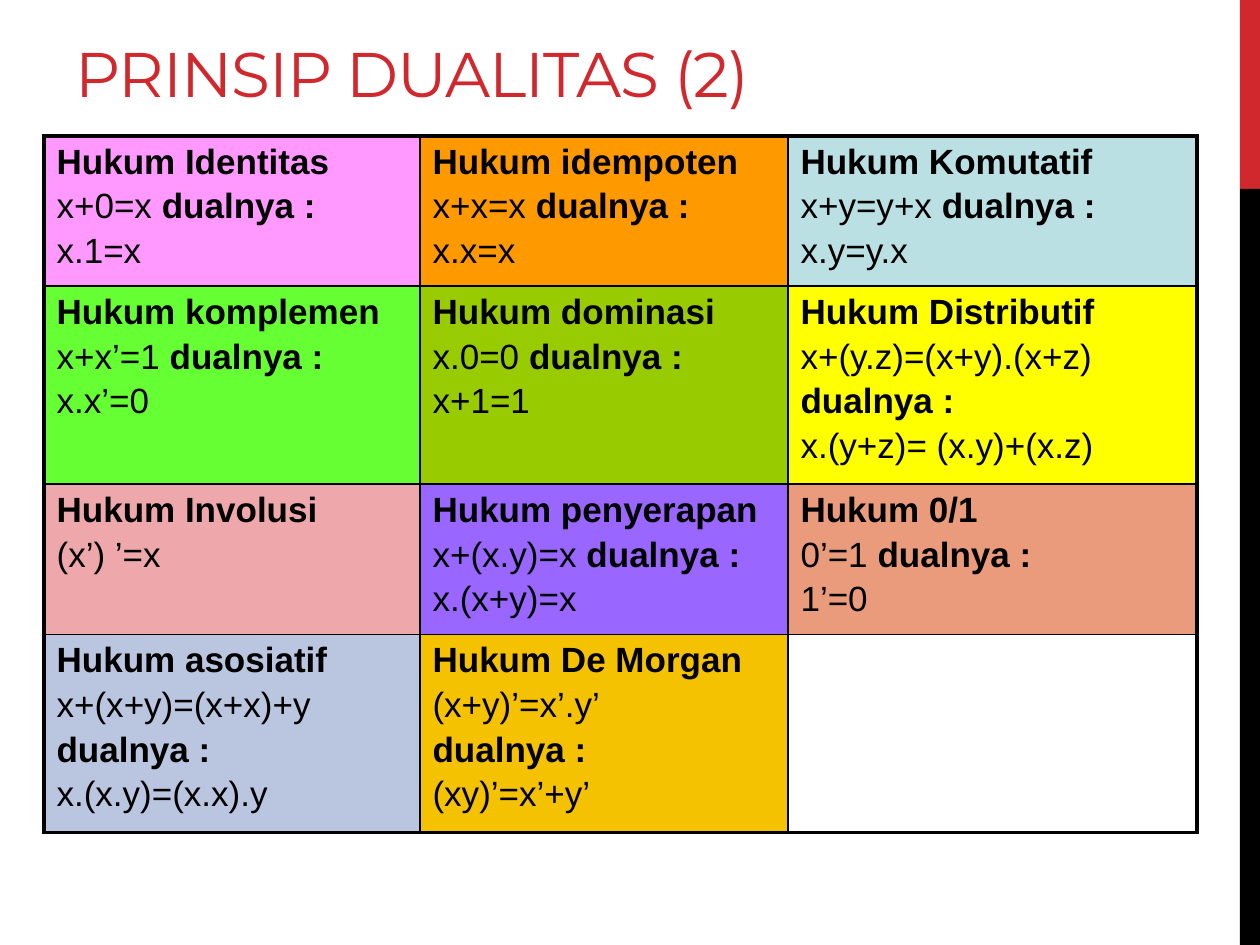
from pptx import Presentation
from pptx.dml.color import RGBColor as RGB
from pptx.enum.shapes import MSO_SHAPE as Shape
from pptx.enum.text import MSO_ANCHOR as Anchor
from pptx.oxml import parse_xml
from pptx.oxml.ns import nsdecls
from pptx.util import Emu, Pt

PX = 914400 // 126


class Theme:
    red, black = "D1282E", "000000"
    head, body = "Montserrat", "Arial"
    title, text = Pt(36), Pt(20)
    gap = Pt(3.3)
    thin, thick = Pt(1), Pt(2.25)


def px(*nums):
    return [Emu(n * PX) for n in nums]


def edge(cell, side, width):
    cell._tc.get_or_add_tcPr().append(parse_xml(
        f'<a:{side} {nsdecls("a")} w="{width}"><a:solidFill>'
        f'<a:srgbClr val="{Theme.black}"/></a:solidFill></a:{side}>'))


deck = Presentation()
deck.slide_width, deck.slide_height = px(1260, 945)
slide = deck.slides.add_slide(deck.slide_layouts[6])

# Side bars
for top, high, color in ((0, 189, Theme.red), (189, 756, Theme.black)):
    bar = slide.shapes.add_shape(Shape.RECTANGLE, *px(1240, top, 20, high))
    bar.shadow.inherit = False
    bar.fill.solid()
    bar.fill.fore_color.rgb = RGB.from_string(color)
    bar.line.fill.background()

# Title
frame = slide.shapes.add_textbox(*px(63, 21, 798, 95)).text_frame
frame.word_wrap = True
frame.vertical_anchor = Anchor.BOTTOM
para = frame.paragraphs[0]
run = para.add_run()
run.text = "PRINSIP DUALITAS (2)"
run._r.get_or_add_rPr().set("spc", "-60")
para.font.name, para.font.size = Theme.head, Theme.title
para.font.color.rgb = RGB.from_string(Theme.red)

# Laws: fill colour, then the lines of each cell
DUAL = "dualnya :"
laws = [
    [("FF99FF", "Hukum Identitas", "x+0=x dualnya :", "x.1=x"),
     ("FF9900", "Hukum idempoten", "x+x=x dualnya :", "x.x=x"),
     ("BBE0E3", "Hukum Komutatif", "x+y=y+x dualnya :", "x.y=y.x")],
    [("66FF33", "Hukum komplemen", "x+x’=1 dualnya :", "x.x’=0"),
     ("99CC00", "Hukum dominasi", "x.0=0 dualnya :", "x+1=1"),
     ("FFFF00", "Hukum Distributif", "x+(y.z)=(x+y).(x+z)", DUAL,
      "x.(y+z)= (x.y)+(x.z)")],
    [("EEA7AA", "Hukum Involusi", "(x’) ’=x"),
     ("9966FF", "Hukum penyerapan", "x+(x.y)=x dualnya :", "x.(x+y)=x"),
     ("EA9B7C", "Hukum 0/1", "0’=1 dualnya :", "1’=0")],
    [("BAC5DF", "Hukum asosiatif", "x+(x+y)=(x+x)+y", DUAL, "x.(x.y)=(x.x).y"),
     ("F5C201", "Hukum De Morgan", "(x+y)’=x’.y’", DUAL, "(xy)’=x’+y’"),
     (None,)],
]
wide, high = px(376, 368, 409), px(145, 146, 145, 183)

# Table
table = slide.shapes.add_table(
    len(high), len(wide), *px(44, 136), sum(wide), sum(high)).table
table.first_row = table.horz_banding = False
for col, size in zip(table.columns, wide):
    col.width = size
for row, size in zip(table.rows, high):
    row.height = size

for r, row in enumerate(laws):
    for c, (color, *lines) in enumerate(row):
        cell = table.cell(r, c)
        outer = {"lnL": c == 0, "lnR": c == len(wide) - 1,
                 "lnT": r == 0, "lnB": r == len(high) - 1}
        for side, out in outer.items():
            edge(cell, side, Theme.thick if out else Theme.thin)
        if color:
            cell.fill.solid()
            cell.fill.fore_color.rgb = RGB.from_string(color)
        else:
            cell.fill.background()

        # Headings and the word for the dual are bold
        for i, line in enumerate(lines):
            frame = cell.text_frame
            para = frame.add_paragraph() if i else frame.paragraphs[0]
            if i:
                para.space_before = Theme.gap
            rule, dual, _ = line.partition(DUAL)
            for text, bold in ((rule, i == 0), (dual, True)):
                if text:
                    run = para.add_run()
                    run.text, run.font.bold = text, bold
            para.font.name, para.font.size = Theme.body, Theme.text
            para.font.color.rgb = RGB.from_string(Theme.black)

deck.save("out.pptx")
